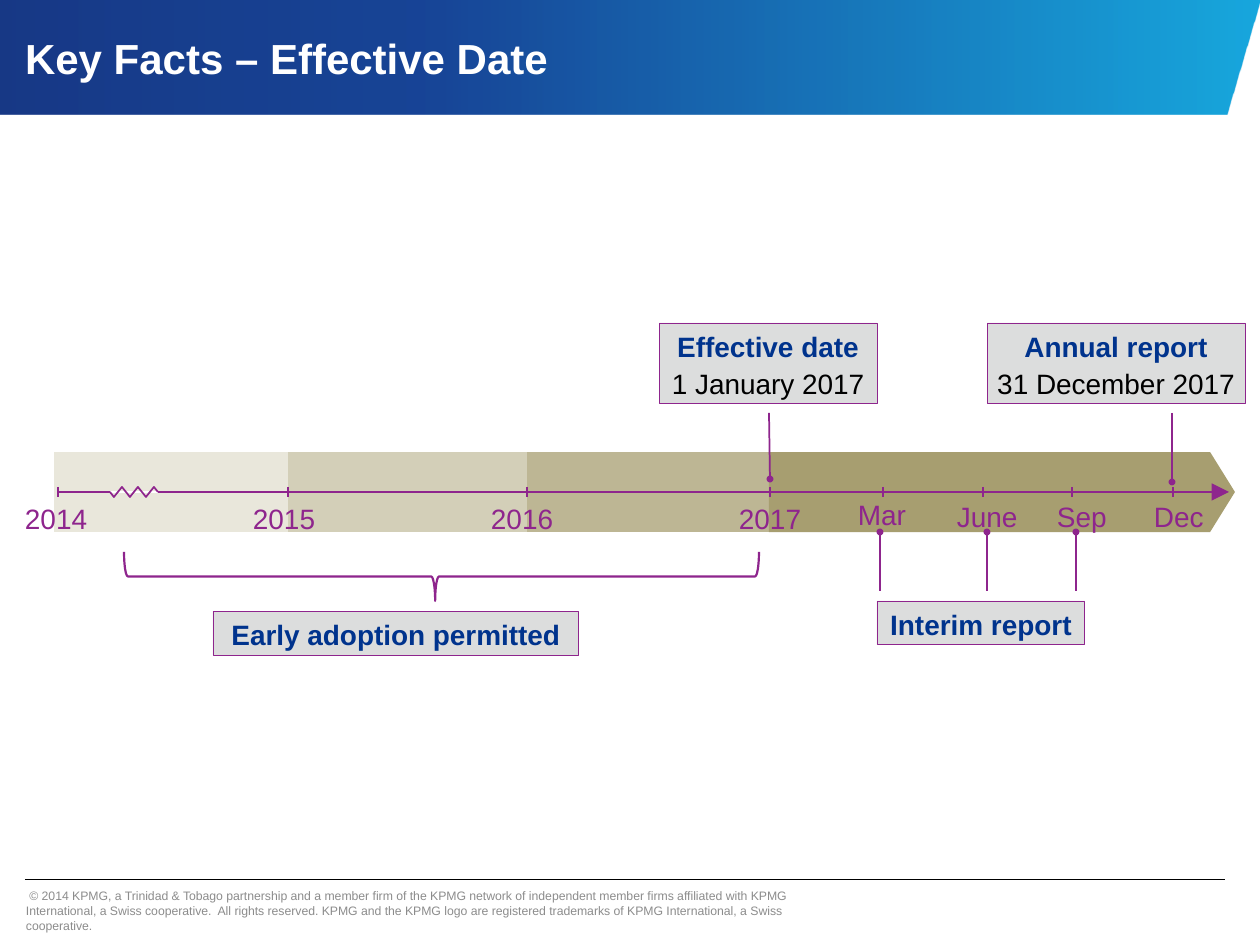
from dataclasses import dataclass
from typing import Optional

import pptx
import pptx.util
from pptx.dml.color import RGBColor
from pptx.enum.shapes import MSO_CONNECTOR, MSO_SHAPE
from pptx.enum.text import MSO_ANCHOR, MSO_AUTO_SIZE, PP_ALIGN
from pptx.oxml.ns import qn
from lxml import etree

EMU_PER_PX = 914400 / 126


@dataclass(frozen=True)
class Theme:
    font: str = "Arial"
    blue: str = "00338D"
    purple: str = "8E258D"
    panel: str = "DCDDDD"
    black: str = "000000"
    white: str = "FFFFFF"
    grey: str = "8C8C8C"
    header: tuple = ((0, "00257A"), (35, "00338D"), (100, "009FDA"))
    title_size: int = 24
    text_size: int = 16
    footer_size: int = 7


@dataclass(frozen=True)
class Band:
    x: int
    w: int
    color: str
    kind: MSO_SHAPE = MSO_SHAPE.RECTANGLE


@dataclass(frozen=True)
class Mark:
    text: str
    x: int
    y: int
    w: int
    tick: int


@dataclass(frozen=True)
class Callout:
    x: int
    y: int
    w: int
    h: int
    heading: str
    date: str = ""


@dataclass(frozen=True)
class Leader:
    x1: int
    y1: int
    x2: int
    y2: int


T = Theme()
AXIS_Y = 492
# Later bands overlap the earlier ones
BANDS = [
    Band(520, 249, "BDB694"),
    Band(282, 245, "D3CFB8"),
    Band(54, 234, "E9E7DB"),
    Band(769, 466, "A79E70", MSO_SHAPE.PENTAGON),
]
MARKS = [
    Mark("2014", 25, 503, 63, 58),
    Mark("2015", 253, 503, 63, 288),
    Mark("2016", 491, 503, 63, 527),
    Mark("2017", 739, 503, 63, 770),
    Mark("Mar", 858, 499, 49, 883),
    Mark("June", 957, 501, 62, 983),
    Mark("Sep", 1057, 501, 50, 1072),
    Mark("Dec", 1154, 501, 50, 1173),
]
CALLOUTS = [
    Callout(213, 611, 366, 44, "Early adoption permitted"),
    Callout(659, 323, 218, 81, "Effective date", "1 January 2017"),
    Callout(877, 601, 208, 44, "Interim report"),
    Callout(987, 323, 258, 81, "Annual report", "31 December 2017"),
]
LEADERS = [Leader(769, 413, 770, 479), Leader(1172, 413, 1172, 482)]
LEADERS += [Leader(x, 591, x, 532) for x in (880, 987, 1076)]
COPYRIGHT = (
    "© 2014 KPMG, a Trinidad & Tobago partnership and a member firm of the KPMG "
    "network of independent member firms affiliated with KPMG International, a Swiss "
    "cooperative.  All rights reserved. KPMG and the KPMG logo are registered "
    "trademarks of KPMG International, a Swiss cooperative."
)


def px(n: float) -> int:
    return round(n * EMU_PER_PX)


def rgb(color: str) -> RGBColor:
    return RGBColor.from_string(color)


def write(p, text: str, *, size: int = T.text_size, color: str = T.purple,
          bold: bool = False, align=PP_ALIGN.LEFT, spacing: Optional[float] = None,
          before: int = 0) -> None:
    p.alignment = align
    p.space_before = pptx.util.Pt(before)
    if spacing:
        p.line_spacing = spacing
    r = p.add_run()
    r.text = text
    r.font.name, r.font.size, r.font.bold = T.font, pptx.util.Pt(size), bold
    r.font.color.rgb = rgb(color)


def frame(sp, left: int, top: int, right: int, bottom: int, anchor, wrap: bool = True):
    tf = sp.text_frame
    tf.margin_left, tf.margin_top = px(left), px(top)
    tf.margin_right, tf.margin_bottom = px(right), px(bottom)
    tf.vertical_anchor, tf.word_wrap = anchor, wrap
    return tf


def add_box(s, kind, x: int, y: int, w: int, h: int, *, fill: str = "",
            line: str = "", width: float = 0.5):
    sp = s.shapes.add_shape(kind, px(x), px(y), px(w), px(h))
    sp.shadow.inherit = False
    if fill:
        sp.fill.solid()
        sp.fill.fore_color.rgb = rgb(fill)
    else:
        sp.fill.background()
    if line:
        sp.line.color.rgb = rgb(line)
        sp.line.width = pptx.util.Pt(width)
    else:
        sp.line.fill.background()
    return sp


def add_line(s, x1: int, y1: int, x2: int, y2: int, *, color: str = T.purple,
             width: float = 1, head: str = "", head_size: str = "med") -> None:
    c = s.shapes.add_connector(MSO_CONNECTOR.STRAIGHT, px(x1), px(y1), px(x2), px(y2))
    c.line.color.rgb = rgb(color)
    c.line.width = pptx.util.Pt(width)
    if head:
        etree.SubElement(c.line._get_or_add_ln(), qn("a:tailEnd"),
                         type=head, w=head_size, len=head_size)
    etree.SubElement(c._element.spPr, qn("a:effectLst"))


def add_outline(s, points: list, *, close: bool):
    fb = s.shapes.build_freeform(*points[0], scale=EMU_PER_PX)
    fb.add_line_segments(points[1:], close=close)
    sp = fb.convert_to_shape()
    sp.shadow.inherit = False
    return sp


def add_header(s) -> None:
    sp = add_outline(s, [(0, 0), (0, 115), (1226, 115), (1260, 0)], close=True)
    sp.line.fill.background()
    sp.fill.gradient()
    sp.fill.gradient_angle = 0
    stops = sp._element.spPr.find(".//" + qn("a:gsLst"))
    for gs in list(stops):
        stops.remove(gs)
    for pos, color in T.header:
        gs = etree.SubElement(stops, qn("a:gs"), pos=str(pos * 1000))
        clr = etree.SubElement(gs, qn("a:srgbClr"), val=color)
        etree.SubElement(clr, qn("a:alpha"), val="90000")


def add_title(s, text: str) -> None:
    sp = s.shapes.title
    sp.left, sp.top, sp.width, sp.height = px(25), px(0), px(951), px(116)
    tf = frame(sp, 0, 0, 0, 0, MSO_ANCHOR.MIDDLE)
    write(tf.paragraphs[0], text, size=T.title_size, color=T.white, bold=True)
    # Bring the title in front of the header
    s.shapes._spTree.append(sp._element)


def add_mark(s, m: Mark) -> None:
    tb = s.shapes.add_textbox(px(m.x), px(m.y), px(m.w), px(33))
    tf = frame(tb, 0, 5, 0, 0, MSO_ANCHOR.TOP, wrap=False)
    tf.auto_size = MSO_AUTO_SIZE.SHAPE_TO_FIT_TEXT
    write(tf.paragraphs[0], m.text, spacing=0.8)
    add_line(s, m.tick, AXIS_Y - 5, m.tick, AXIS_Y + 5)


def add_callout(s, c: Callout) -> None:
    sp = add_box(s, MSO_SHAPE.RECTANGLE, c.x, c.y, c.w, c.h, fill=T.panel, line=T.purple)
    tf = frame(sp, 5, 8, 5, 5, MSO_ANCHOR.MIDDLE)
    write(tf.paragraphs[0], c.heading, color=T.blue, bold=True, align=PP_ALIGN.CENTER)
    if c.date:
        write(tf.add_paragraph(), c.date, color=T.black, align=PP_ALIGN.CENTER, before=2)


def add_axis(s) -> None:
    add_line(s, 58, AXIS_Y, 1229, AXIS_Y, head="triangle", head_size="lg")
    # Zigzag break in the time scale
    add_line(s, 158, AXIS_Y, 110, AXIS_Y, color=T.white)
    peaks = [(114 + 8 * i, AXIS_Y + (-5 if i % 2 else 5)) for i in range(6)]
    sp = add_outline(s, [(110, AXIS_Y), *peaks, (158, AXIS_Y)], close=False)
    sp.fill.background()
    sp.line.color.rgb = rgb(T.purple)
    sp.line.width = pptx.util.Pt(1)


def main() -> None:
    prs = pptx.Presentation()
    prs.slide_width, prs.slide_height = px(1260), px(945)
    s = prs.slides.add_slide(prs.slide_layouts[5])

    # Header and title
    add_header(s)
    add_title(s, "Key Facts – Effective Date")

    # Timeline
    for b in BANDS:
        sp = add_box(s, b.kind, b.x, 452, b.w, 80, fill=b.color)
        if b.kind == MSO_SHAPE.PENTAGON:
            sp.adjustments[0] = 0.31
    add_axis(s)
    for m in MARKS:
        add_mark(s, m)

    # Callouts, leaders and the early adoption brace
    for c in CALLOUTS:
        add_callout(s, c)
    for ln in LEADERS:
        add_line(s, ln.x1, ln.y1, ln.x2, ln.y2, head="oval", head_size="sm")
    brace = add_box(s, MSO_SHAPE.RIGHT_BRACE, 417, 259, 49, 635, line=T.purple, width=1.25)
    brace.rotation = 90
    brace.adjustments[0], brace.adjustments[1] = 0.08, 0.51

    # Footer
    add_line(s, 25, 879, 1225, 879, color=T.black, width=0.25)
    tb = s.shapes.add_textbox(px(13), px(879), px(850), px(63))
    tf = frame(tb, 13, 6, 13, 6, MSO_ANCHOR.MIDDLE)
    tf.paragraphs[0].font.size = pptx.util.Pt(T.footer_size)
    write(tf.paragraphs[0], " " + COPYRIGHT, size=T.footer_size, color=T.grey)

    prs.save("out.pptx")


if __name__ == "__main__":
    main()
